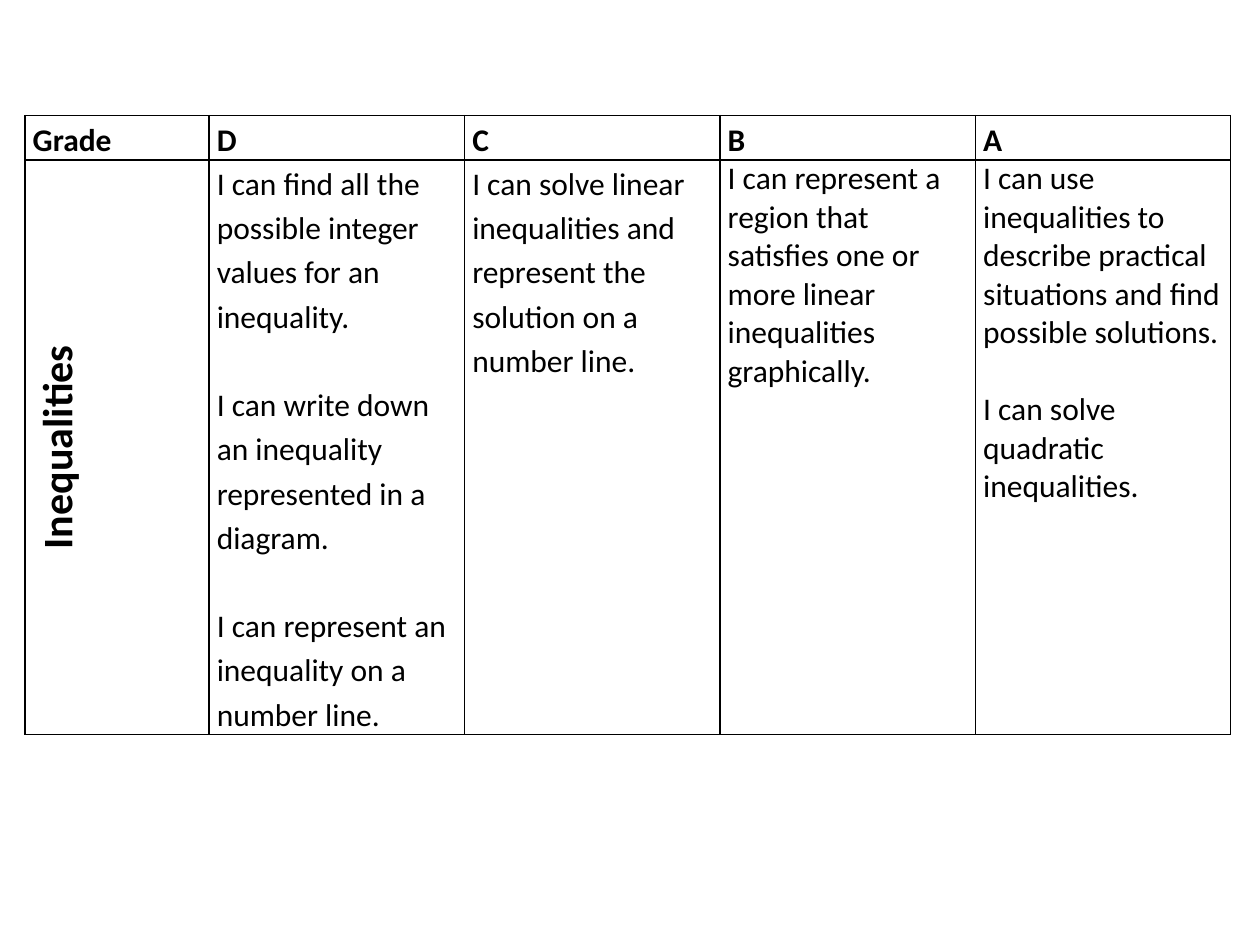
from dataclasses import dataclass

import pptx
import pptx.dml.color
import pptx.enum.text
import pptx.oxml
import pptx.oxml.ns
import pptx.util
from pptx.util import Cm

COLOURS = {"text": "000000", "border": "000000"}
LINE_HEIGHT = 1.22  # Calibri line height relative to its size
LOOSE, SINGLE = 1.15, 1.0
BODY_SIZE = 18
MARGINS = {"margin_left": Cm(0.16), "margin_right": Cm(0.16),
           "margin_top": Cm(0), "margin_bottom": Cm(0)}


@dataclass
class CellText:
    paragraphs: list[str]
    bold: bool = False
    size: int = BODY_SIZE
    spacing: float = LOOSE
    upright: bool = False


ROWS = [
    [CellText([grade], bold=True) for grade in ("Grade", "D", "C", "B", "A")],
    [
        CellText(["Inequalities"], bold=True, size=24, upright=True),
        CellText(["I can find all the possible integer values for an inequality.",
                  "I can write down an inequality represented in a diagram.",
                  "I can represent an inequality on a number line."]),
        CellText(["I can solve linear inequalities and represent the solution "
                  "on a number line."]),
        CellText(["I can represent a region that satisfies one or more linear "
                  "inequalities graphically."], spacing=SINGLE),
        CellText(["I can use inequalities to describe practical situations and "
                  "find possible solutions.",
                  "I can solve quadratic inequalities."], spacing=SINGLE),
    ],
]
COLUMN_WIDTHS = [Cm(3.71)] + [Cm(5.15)] * 4
ROW_HEIGHTS = [Cm(0.89), Cm(11.58)]


def set_format(target: object, values: dict) -> None:
    for name, value in values.items():
        setattr(target, name, value)


def add_borders(cell: pptx.table._Cell) -> None:
    properties = cell._tc.get_or_add_tcPr()
    for side in ("lnL", "lnR", "lnT", "lnB"):
        properties.append(pptx.oxml.parse_xml(
            f'<a:{side} {pptx.oxml.ns.nsdecls("a")} w="12700"><a:solidFill>'
            f'<a:srgbClr val="{COLOURS["border"]}"/></a:solidFill></a:{side}>'))


def fill_cell(cell: pptx.table._Cell, content: CellText) -> None:
    set_format(cell, MARGINS)
    add_borders(cell)
    cell.fill.background()
    if content.upright:
        cell._tc.get_or_add_tcPr().set("vert", "vert270")
    for index, words in enumerate(content.paragraphs):
        frame = cell.text_frame
        para = frame.add_paragraph() if index else frame.paragraphs[0]
        para.line_spacing = content.spacing
        if index:
            gap = content.size * LINE_HEIGHT * content.spacing
            para.space_before = pptx.util.Pt(round(gap, 1))
        if content.upright:
            para.alignment = pptx.enum.text.PP_ALIGN.CENTER
        span = para.add_run()
        span.text = words
        set_format(span.font, {"name": "Calibri", "bold": content.bold,
                               "size": pptx.util.Pt(content.size)})
        span.font.color.rgb = pptx.dml.color.RGBColor.from_string(COLOURS["text"])


def add_grade_table(page: pptx.slide.Slide) -> None:
    table = page.shapes.add_table(
        len(ROWS), len(COLUMN_WIDTHS), Cm(0.5), Cm(2.33),
        sum(COLUMN_WIDTHS), sum(ROW_HEIGHTS)).table
    set_format(table, {"first_row": False, "horz_banding": False})
    for column, width in zip(table.columns, COLUMN_WIDTHS):
        column.width = width
    for row, height, contents in zip(table.rows, ROW_HEIGHTS, ROWS):
        row.height = height
        for cell, content in zip(row.cells, contents):
            fill_cell(cell, content)


def main() -> None:
    deck = pptx.Presentation()
    set_format(deck, {"slide_width": Cm(25.4), "slide_height": Cm(19.05)})
    page = deck.slides.add_slide(deck.slide_layouts[6])
    add_grade_table(page)
    deck.save("out.pptx")


if __name__ == "__main__":
    main()
